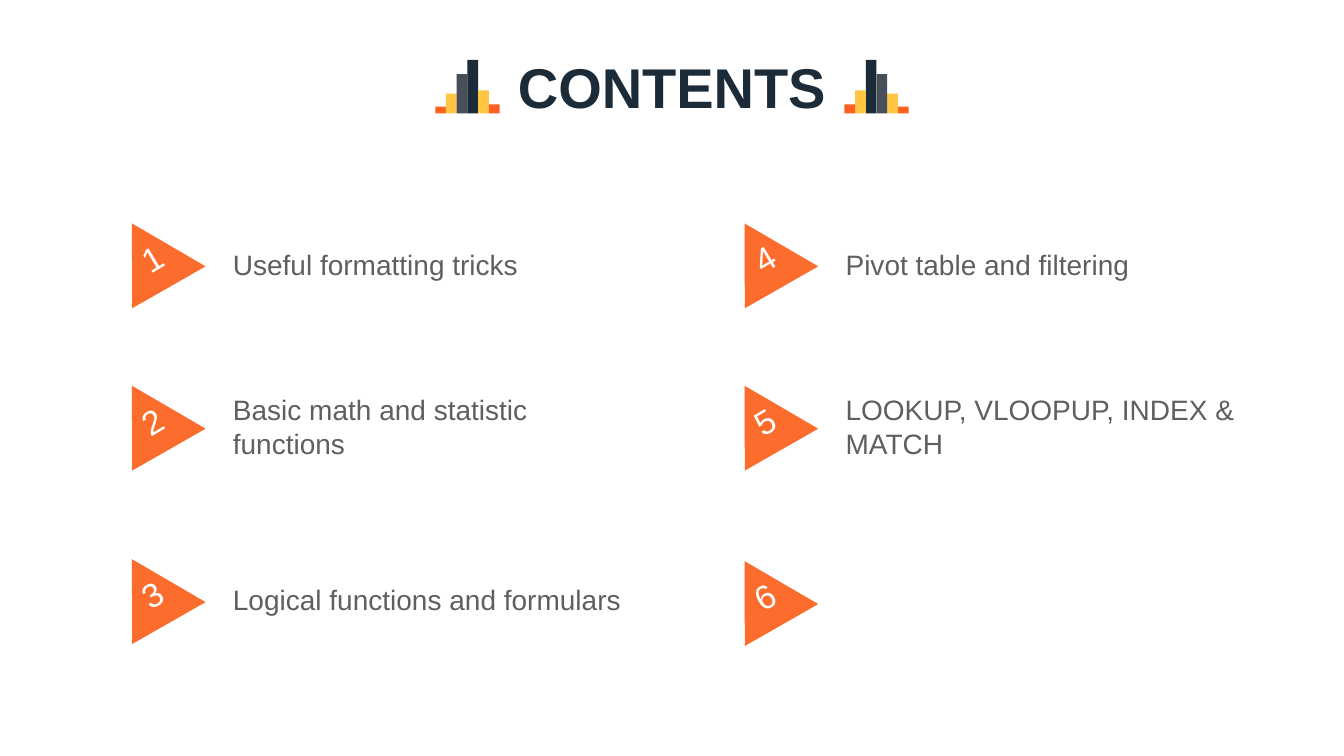
import pptx
import pptx.dml.color
import pptx.enum.shapes
import pptx.enum.text
import pptx.util
from pptx.util import Cm

# Content: (number, topic, column, marker top in cm)
TITLE = "CONTENTS"
TOPICS = [
    ("1", "Useful formatting tricks", 0, 5.51),
    ("2", "Basic math and statistic functions", 0, 9.6),
    ("3", "Logical functions and formulars", 0, 13.97),
    ("4", "Pivot table and filtering", 1, 5.51),
    ("5", "LOOKUP, VLOOPUP, INDEX & MATCH", 1, 9.6),
    ("6", "", 1, 14.02),
]
# Bars of the skyline icon, outermost first: (height in cm, colour)
BARS = [(0.17, "accent"), (0.5, "yellow"), (0.99, "slate"),
        (1.35, "navy"), (0.58, "yellow"), (0.23, "accent")]

THEME = {
    "font": "Arial",
    "colours": {"accent": "FC611F", "yellow": "FFC543", "slate": "464F5A",
                "navy": "1C2B38", "marker": "FC6C2C", "body": "5F5F5F",
                "white": "FFFFFF"},
    "sizes": {"title": 40, "number": 24, "topic": 20},
}

# Geometry in cm
SLIDE_WIDTH, SLIDE_HEIGHT = 33.87, 19.05
TITLE_BOX = (12.6, 0.81, 8.66, 2.74)
ICON_LEFT, ICON_BOTTOM, BAR_WIDTH = 10.97, 2.86, 0.27
COLUMN_LEFTS = (2.72, 18.16)
MARKER_POINTS = [(1.09, 0), (2.13, 1.88), (0, 1.84)]
MARKER_ROTATION = 329.2
TOPIC_OFFSET = (3.15, 0.06)
TOPIC_SIZE = (9.86, 2.16)


def colour(name):
    return pptx.dml.color.RGBColor.from_string(THEME["colours"][name])


def paint(shape, name):
    shape.shadow.inherit = False
    shape.fill.solid()
    shape.fill.fore_color.rgb = colour(name)
    shape.line.fill.background()


def write(shape, text, size, colour_name, alignment, bold=False, insets=None):
    frame = shape.text_frame
    frame.word_wrap = True
    frame.vertical_anchor = pptx.enum.text.MSO_ANCHOR.MIDDLE
    if insets:
        (frame.margin_left, frame.margin_top,
         frame.margin_right, frame.margin_bottom) = map(Cm, insets)
    paragraph = frame.paragraphs[0]
    paragraph.alignment = alignment
    run = paragraph.add_run()
    run.text = text
    run.font.name = THEME["font"]
    run.font.size = pptx.util.Pt(THEME["sizes"][size])
    run.font.bold = bold
    run.font.color.rgb = colour(colour_name)


def add_icon(slide, mirrored):
    group = slide.shapes.add_group_shape()
    for index, (height, name) in enumerate(BARS):
        left = ICON_LEFT + index * BAR_WIDTH
        if mirrored:
            left = SLIDE_WIDTH - left - BAR_WIDTH
        bar = group.shapes.add_shape(
            pptx.enum.shapes.MSO_SHAPE.RECTANGLE, Cm(left),
            Cm(ICON_BOTTOM - height), Cm(BAR_WIDTH), Cm(height))
        paint(bar, name)


def add_topic(slide, number, topic, column, top):
    group = slide.shapes.add_group_shape()
    left = COLUMN_LEFTS[column]
    align = pptx.enum.text.PP_ALIGN
    if topic:
        box = group.shapes.add_textbox(
            Cm(left + TOPIC_OFFSET[0]), Cm(top + TOPIC_OFFSET[1]),
            *map(Cm, TOPIC_SIZE))
        write(box, topic, "topic", "body", align.LEFT, insets=(0, 0, 0, 0))
    points = [(Cm(left + x), Cm(top + y)) for x, y in MARKER_POINTS]
    builder = group.shapes.build_freeform(*points[0])
    builder.add_line_segments(points[1:], close=True)
    marker = builder.convert_to_shape()
    marker.rotation = MARKER_ROTATION
    paint(marker, "marker")
    write(marker, number, "number", "white", align.CENTER,
          insets=(0, 0.15, 0, 0))


def main():
    presentation = pptx.Presentation()
    presentation.slide_width = Cm(SLIDE_WIDTH)
    presentation.slide_height = Cm(SLIDE_HEIGHT)
    slide = presentation.slides.add_slide(presentation.slide_layouts[6])

    # Title between two mirrored icons
    title = slide.shapes.add_textbox(*map(Cm, TITLE_BOX))
    write(title, TITLE, "title", "navy",
          pptx.enum.text.PP_ALIGN.CENTER, bold=True)
    for mirrored in (False, True):
        add_icon(slide, mirrored)

    # Numbered topics
    for entry in TOPICS:
        add_topic(slide, *entry)

    presentation.save("out.pptx")


if __name__ == "__main__":
    main()
